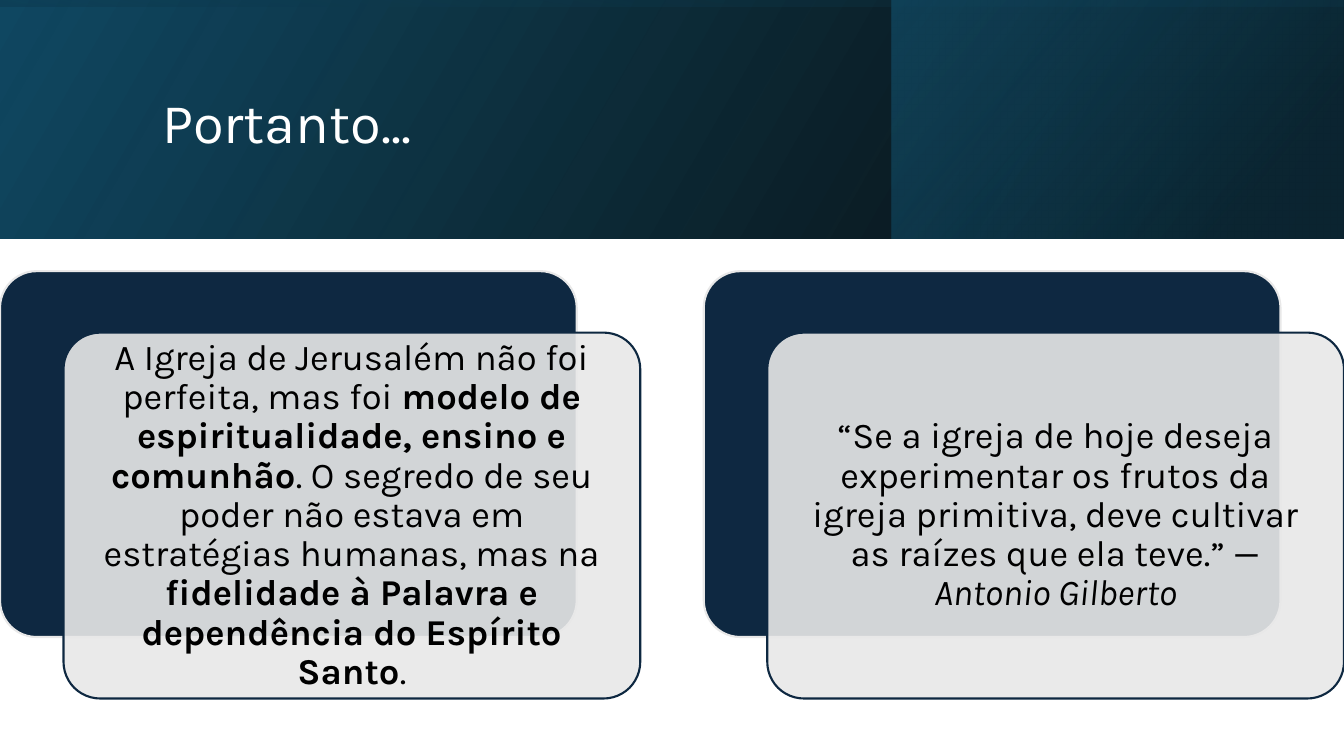
import pptx
import pptx.util
import pptx.dml.color
import pptx.enum.shapes
import pptx.enum.text
import lxml.etree

Inch = pptx.util.Inches
Kind = pptx.enum.shapes.MSO_SHAPE
Align = pptx.enum.text.PP_ALIGN
NAVY, GREY = "0E2841", "E8E8E8"
WIDE, HIGH = 13.33, 7.5

deck = pptx.Presentation()
deck.slide_width, deck.slide_height = Inch(WIDE), Inch(HIGH)
slide = deck.slides.add_slide(deck.slide_layouts[6])


def tint(color, code, alpha=100):
    """Set a colour from a hex string, with its opacity in percent."""
    color.rgb = pptx.dml.color.RGBColor.from_string(code)
    if alpha < 100:
        for node in color._xFill.iter("{*}srgbClr") if hasattr(color, "_xFill") else color._parent.iter("{*}srgbClr"):
            mark = lxml.etree.SubElement(node, node.tag.replace("srgbClr", "alpha"))
            mark.set("val", str(alpha * 1000))


def write(box, runs, size, color, inset=(0.1, 0.05), align=Align.LEFT):
    """Add a text box; each run is its text and a style: "", "b" or "i"."""
    frame = slide.shapes.add_textbox(*map(Inch, box)).text_frame
    frame.word_wrap = True
    frame.vertical_anchor = pptx.enum.text.MSO_ANCHOR.MIDDLE
    frame.margin_left = frame.margin_right = Inch(inset[0])
    frame.margin_top = frame.margin_bottom = Inch(inset[1])
    para = frame.paragraphs[0]
    para.alignment, para.line_spacing = align, 0.9
    for text, style in runs:
        run = para.add_run()
        run.text = text
        run.font.name, run.font.size = "Karla", pptx.util.Pt(size)
        run.font.bold, run.font.italic = style == "b", style == "i"
        tint(run.font.color, color)


# Header: three layered gradients, stops as (percent, colour, opacity)
band = 2.37
mid = (WIDE - band) / 2
layers = [
    ((0, 0, WIDE, band), 0, 330, [(0, "000000", 96), (100, "104862", 100)]),
    ((8.84, 0, 4.48, band), 0, 320, [(19, "0B3041", 68), (100, "156082", 48)]),
    ((mid, -mid, band, WIDE), 270, 350, [(23, "104862", 16), (99, "000000", 45)]),
]
for box, turn, angle, stops in layers:
    layer = slide.shapes.add_shape(Kind.RECTANGLE, *map(Inch, box))
    layer.shadow.inherit = False
    layer.line.fill.background()
    layer.rotation = turn
    layer._element.spPr.xfrm.set("flipH", "1")
    layer.fill.gradient()
    layer.fill.gradient_angle = 360 - angle
    for stop, (place, code, alpha) in zip(layer.fill.gradient_stops, stops):
        stop.position = place / 100
        tint(stop.color, code)
        node = stop._gs[0]
        mark = lxml.etree.SubElement(node, node.tag.replace("srgbClr", "alpha"))
        mark.set("val", str(alpha * 1000))

write((1.51, 0.38, 10.63, 1.72), [("Portanto...", "")], 40, "FFFFFF")

# Cards: a navy back and a see-through front, shifted down and right
card_w, card_h, top = 5.72, 3.63, 2.69
shift_x, shift_y, pad = 0.63, 0.61, 0.11
step = WIDE - card_w - shift_x
cards = [
    [("A Igreja de Jerusalém não foi perfeita, mas foi ", ""),
     ("modelo de espiritualidade, ensino e comunhão", "b"),
     (". O segredo de seu poder não estava em estratégias humanas, mas na ", ""),
     ("fidelidade à Palavra e dependência do Espírito Santo", "b"),
     (".", "")],
    [("“Se a igreja de hoje deseja experimentar os frutos da igreja primitiva, "
      "deve cultivar as raízes que ela teve.” — ", ""),
     ("Antonio Gilberto", "i")],
]
for col, runs in enumerate(cards):
    for level, (fill, line, alpha) in enumerate([(NAVY, GREY, 100), (GREY, NAVY, 90)]):
        x, y = col * step + level * shift_x, top + level * shift_y
        card = slide.shapes.add_shape(
            Kind.ROUNDED_RECTANGLE, *map(Inch, (x, y, card_w, card_h)))
        card.adjustments[0] = 0.1
        card.shadow.inherit = False
        card.fill.solid()
        tint(card.fill.fore_color, fill, alpha)
        card.line.width = pptx.util.Pt(1.5)
        tint(card.line.color, line)
    write((x + pad, y + pad, card_w - 2 * pad, card_h - 2 * pad), runs, 26, "000000",
          inset=(pad, pad), align=Align.CENTER)

deck.save("out.pptx")
